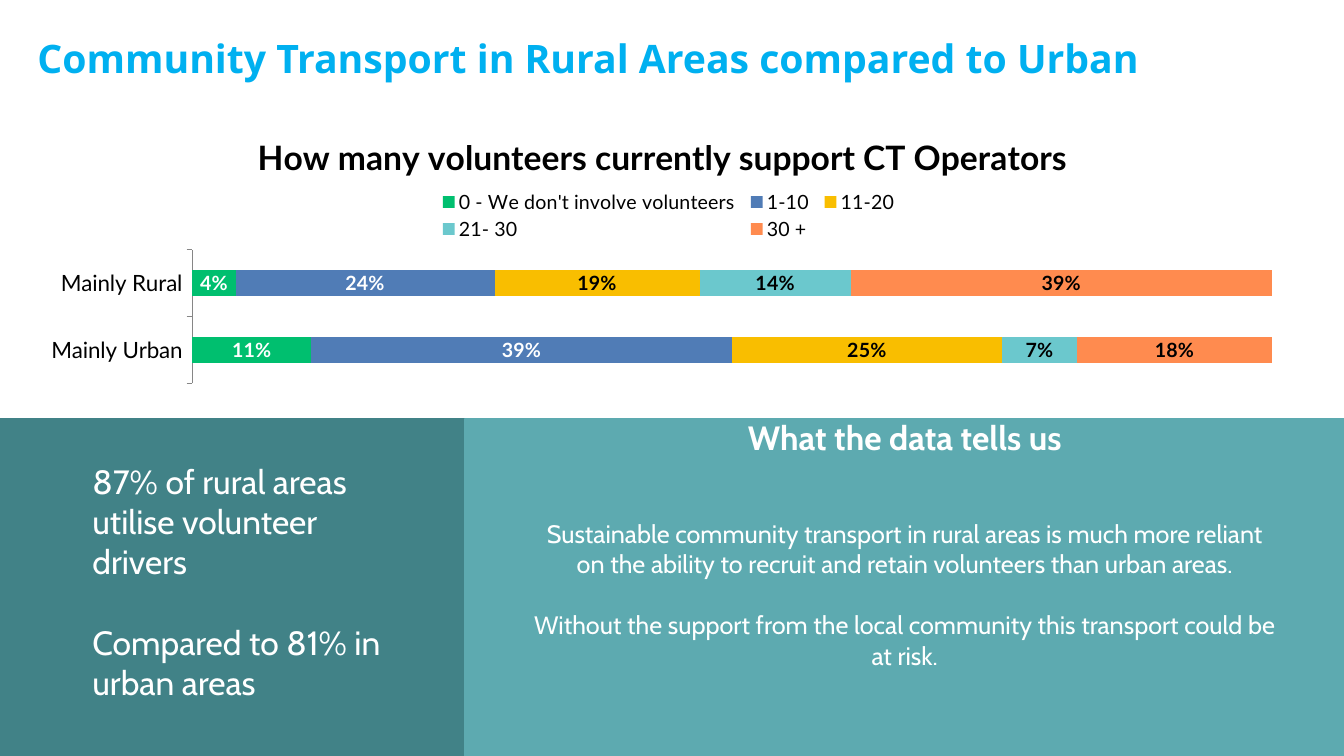
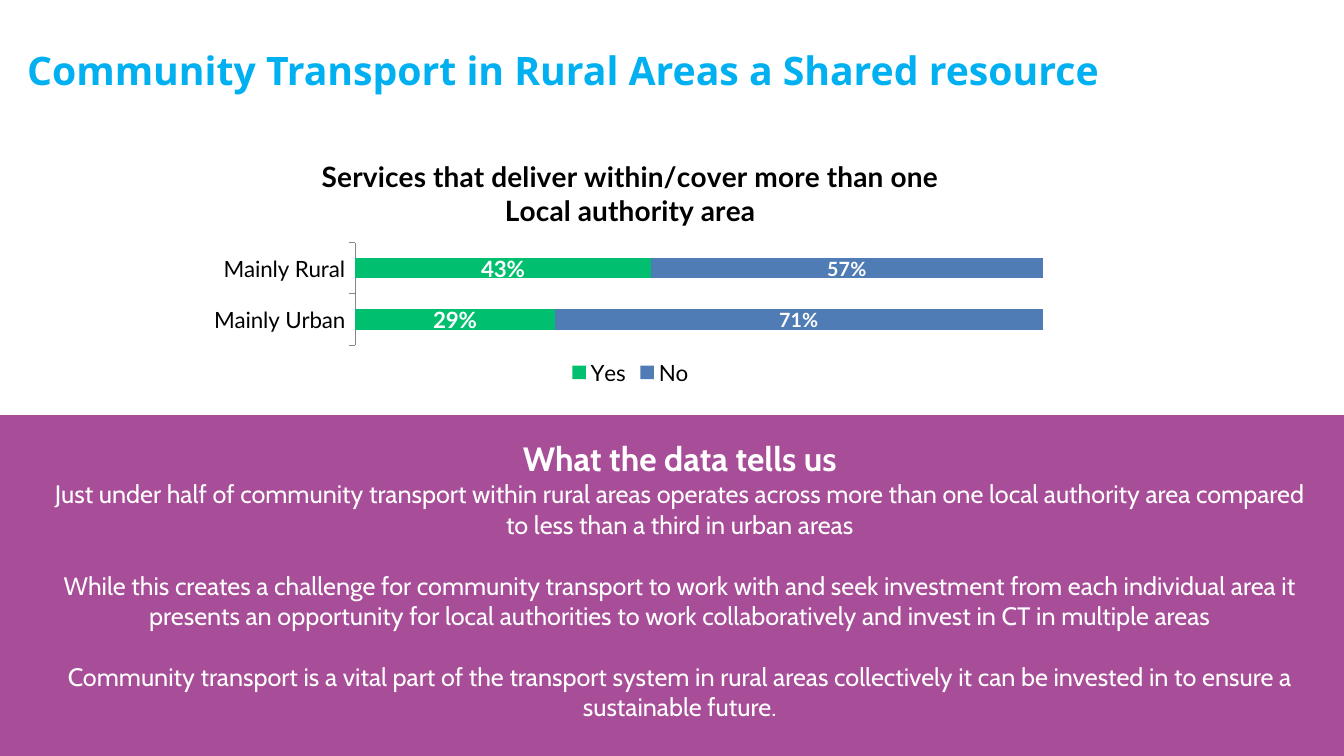
from lxml import etree
from pptx import Presentation
from pptx.chart.data import CategoryChartData
from pptx.dml.color import RGBColor
from pptx.enum.chart import XL_CHART_TYPE, XL_LABEL_POSITION, XL_LEGEND_POSITION, XL_TICK_MARK
from pptx.enum.shapes import MSO_SHAPE
from pptx.enum.text import MSO_ANCHOR, MSO_AUTO_SIZE, PP_ALIGN
from pptx.oxml.ns import qn
from pptx.util import Cm, Pt

STACKED = XL_CHART_TYPE.BAR_STACKED_100
CENTRED = XL_LABEL_POSITION.CENTER
ABOVE = XL_LEGEND_POSITION.TOP
BELOW = XL_LEGEND_POSITION.BOTTOM
OUTSIDE = XL_TICK_MARK.OUTSIDE
NONE = XL_TICK_MARK.NONE
RECT = MSO_SHAPE.RECTANGLE
TOP = MSO_ANCHOR.TOP
FIXED = MSO_AUTO_SIZE.NONE
LEFT = PP_ALIGN.LEFT
MID = PP_ALIGN.CENTER

WIDE, HIGH = 33.87, 19.05
SPLIT = 11.73
WHITE, BLACK, SKY, GREY = "FFFFFF", "000000", "00B0F0", "868686"
GREEN, BLUE, GOLD, AQUA, CORAL = "00BF6F", "507CB6", "F9BE00", "6BC8CD", "FF8B4F"
TEAL, MIST, PLUM = "418287", "5DAAB0", "A84D98"
AREAS = ["Mainly Urban", "Mainly Rural"]
HEAD = ("What the data tells us", 24, True, 0)

PAGES = [
    {
        "title": "Community Transport in Rural Areas compared to Urban",
        "spot": (0.69, 0.74, 28.55, 1.45),
        "chart": (0.69, 2.92, 32, 6.88),
        "name": "How many volunteers currently support CT Operators",
        "size": 24,
        "legend": (ABOVE, 14),
        "frames": {"legend": (0.32, 0.26, 0.37, 0.21), "plot": (0.13, 0.49, 0.85, 0.49)},
        "series": [
            ("0 - We don't involve volunteers", (0.11, 0.04), GREEN, WHITE, 14),
            ("1-10", (0.39, 0.24), BLUE, WHITE, 14),
            ("11-20", (0.25, 0.19), GOLD, BLACK, 14),
            ("21- 30", (0.07, 0.14), AQUA, BLACK, 14),
            ("30 +", (0.18, 0.39), CORAL, BLACK, 14),
        ],
        "bands": [
            (TEAL, (0, 10.57, SPLIT, HIGH - 10.57)),
            (MIST, (SPLIT, 10.57, WIDE - SPLIT, HIGH - 10.57)),
        ],
        "notes": [
            ((2.08, 11.48, 7.87, 6.4), LEFT, [
                ("87% of rural areas utilise volunteer drivers", 24, False, 0),
                ("Compared to 81% in urban areas", 24, False, 29),
            ]),
            ((SPLIT, 10.37, WIDE - SPLIT, 8.5), MID, [
                HEAD,
                ("Sustainable community transport in rural areas is much more reliant\n"
                 "on the ability to recruit and retain volunteers than urban areas.", 18, False, 44),
                ("Without the support from the local community this transport could be\n"
                 "at risk.", 18, False, 22),
            ]),
        ],
    },
    {
        "title": "Community Transport in Rural Areas a Shared resource",
        "spot": (0.43, 1.04, 27.94, 1.45),
        "chart": (5.05, 3.53, 21.67, 6.3),
        "name": "Services that deliver within/cover more than one Local authority area",
        "size": 20,
        "legend": (BELOW, 16),
        "frames": {"plot": (0.18, 0.41, 0.8, 0.41)},
        "series": [
            ("Yes", (0.29, 0.43), GREEN, WHITE, 16),
            ("No", (0.71, 0.57), BLUE, WHITE, 14),
        ],
        "bands": [(PLUM, (0, 10.49, WIDE, HIGH - 10.49))],
        "notes": [
            ((1.09, 10.92, 32.08, 8.13), MID, [
                HEAD,
                ("Just under half of community transport within rural areas operates across more than "
                 "one local authority area compared to less than a third in urban areas", 18, False, 0),
                ("While this creates a challenge for community transport to work with and seek "
                 "investment from each individual area it presents an opportunity for local authorities "
                 "to work collaboratively and invest in CT in multiple areas", 18, False, 22),
                ("Community transport is a vital part of the transport system in rural areas collectively "
                 "it can be invested in to ensure a sustainable future.", 18, False, 22),
            ]),
        ],
    },
]


def paint(fill, tone):
    fill.solid()
    fill.fore_color.rgb = RGBColor.from_string(tone)


def style(font, face, size, tone, bold=False):
    font.name = face
    font.size = Pt(size)
    font.bold = bold
    paint(font.fill, tone)


deck = Presentation()
deck.slide_width, deck.slide_height = Cm(WIDE), Cm(HIGH)

for page in PAGES:
    slide = deck.slides.add_slide(deck.slide_layouts[5])
    title = slide.shapes.title
    title.left, title.top, title.width, title.height = map(Cm, page["spot"])
    frame = title.text_frame
    frame.text = page["title"]
    frame.auto_size = FIXED
    frame.vertical_anchor = TOP
    frame.paragraphs[0].alignment = LEFT
    style(frame.paragraphs[0].runs[0].font, "Open Sans", 28, SKY, True)

    data = CategoryChartData(number_format="0%")
    data.categories = AREAS
    for name, vals, *rest in page["series"]:
        data.add_series(name, vals)
    chart = slide.shapes.add_chart(STACKED, *map(Cm, page["chart"]), data).chart
    style(chart.font, "Lato", 10, BLACK)
    chart.has_title = True
    head = chart.chart_title.text_frame
    head.text = page["name"]
    style(head.paragraphs[0].runs[0].font, "Lato", page["size"], BLACK, True)
    chart.has_legend = True
    side, size = page["legend"]
    chart.legend.position = side
    chart.legend.include_in_layout = False
    style(chart.legend.font, "Lato", size, BLACK)

    axis = chart.category_axis
    axis.major_tick_mark = OUTSIDE
    axis.minor_tick_mark = NONE
    paint(axis.format.line.fill, GREY)
    style(axis.tick_labels.font, "Lato", 16, BLACK)
    chart.value_axis.visible = False
    chart.value_axis.has_major_gridlines = False

    plot = chart.plots[0]
    plot.gap_width = 150
    plot.overlap = 100
    plot.vary_by_categories = False
    for item, (name, vals, tone, ink, size) in zip(plot.series, page["series"]):
        paint(item.format.fill, tone)
        item.invert_if_negative = False
        tags = item.data_labels
        tags.show_value = True
        tags.position = CENTRED
        tags.number_format = "0%"
        tags.number_format_is_linked = False
        style(tags.font, "Lato", size, ink, True)

    root = chart._chartSpace
    hosts = {"legend": (root.find(".//" + qn("c:legend")), 1),
             "plot": (root.find(".//" + qn("c:plotArea")), 0)}
    for part, box in page["frames"].items():
        host, place = hosts[part]
        for old in host.findall(qn("c:layout")):
            host.remove(old)
        layout = etree.Element(qn("c:layout"))
        manual = etree.SubElement(layout, qn("c:manualLayout"))
        rules = [("xMode", "edge"), ("yMode", "edge"), *zip("xywh", box)]
        if part == "plot":
            rules.insert(0, ("layoutTarget", "inner"))
        for key, val in rules:
            etree.SubElement(manual, qn("c:" + key)).set("val", str(val))
        host.insert(place, layout)

    for tone, box in page["bands"]:
        band = slide.shapes.add_shape(RECT, *map(Cm, box))
        band.shadow.inherit = False
        paint(band.fill, tone)
        paint(band.line.fill, tone)
        band.line.width = Pt(1.5)

    for box, align, lines in page["notes"]:
        frame = slide.shapes.add_textbox(*map(Cm, box)).text_frame
        frame.word_wrap = True
        for row, (text, size, bold, gap) in enumerate(lines):
            para = frame.add_paragraph() if row else frame.paragraphs[0]
            para.text = text
            para.alignment = align
            if gap:
                para.space_before = Pt(gap)
            for run in para.runs:
                style(run.font, "Cabin", size, WHITE, bold)

deck.save("out.pptx")
